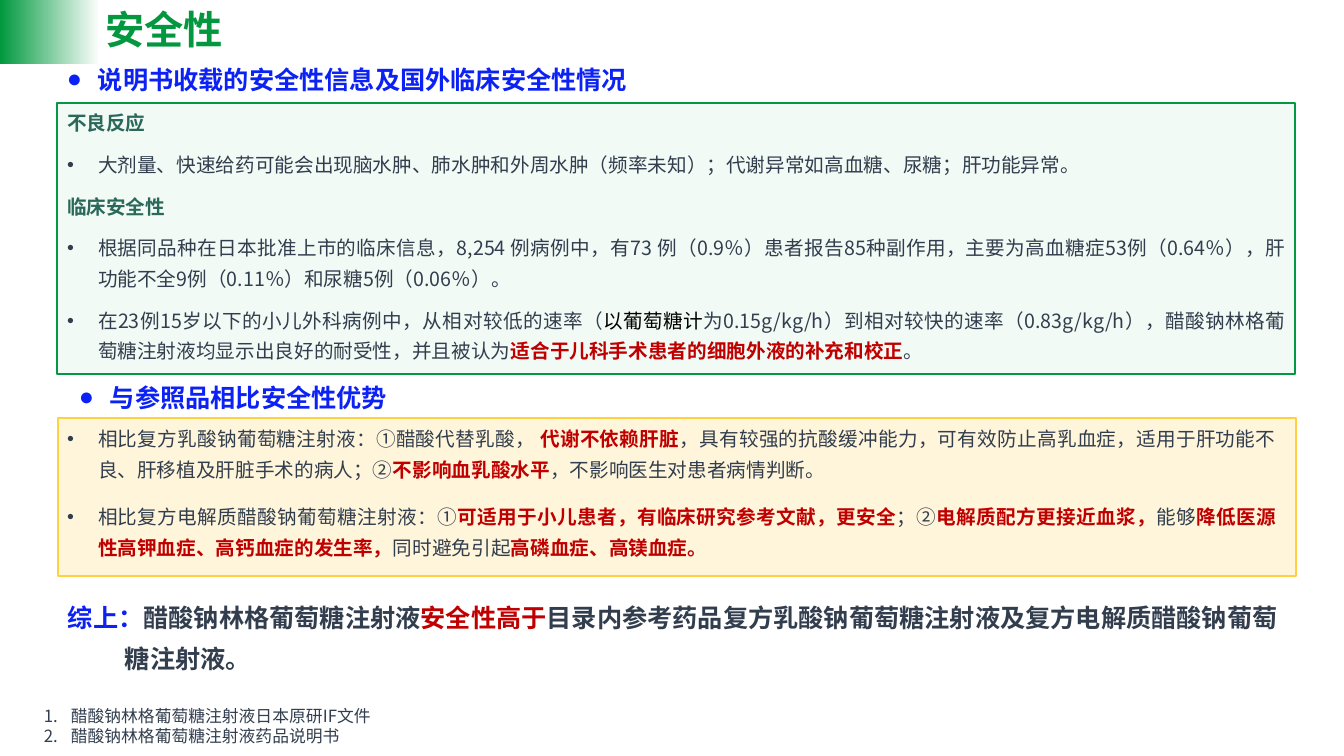
from lxml import etree
from pptx import Presentation
from pptx.dml.color import RGBColor
from pptx.enum.shapes import MSO_SHAPE as Preset
from pptx.enum.text import MSO_ANCHOR as Anchor, MSO_AUTO_SIZE as AutoSize, PP_ALIGN as Align
from pptx.oxml.ns import qn
from pptx.util import Emu, Pt

FONT = "Noto Sans CJK SC"
COLORS = {
    "white": "FFFFFF", "green": "00993E", "title": "039840", "frame": "039841",
    "mint": "F2FAF5", "cream": "FFF2CC", "gold": "FFD040", "teal": "2A685A",
    "slate": "323E4E", "red": "C00000", "blue": "0C22F4", "black": "000000",
}

# Run styles: colour name, bold
PLAIN, KEY, BLACK = ("slate", False), ("red", True), ("black", False)
SUBHEAD, HEADING, TITLE = ("teal", True), ("blue", True), ("title", True)
STRONG = ("slate", True)

# Each paragraph is a bullet (or "") and its runs
TITLE_TEXT = [("", [("安全性", TITLE)])]
LABEL_HEADING = [("●", [("说明书收载的安全性信息及国外临床安全性情况", HEADING)])]
ADVANTAGE_HEADING = [("●", [("与参照品相比安全性优势", HEADING)])]
SAFETY = [
    ("", [("不良反应", SUBHEAD)]),
    ("•", [("大剂量、快速给药可能会出现脑水肿、肺水肿和外周水肿（频率未知）；"
            "代谢异常如高血糖、尿糖；肝功能异常。", PLAIN)]),
    ("", [("临床安全性", SUBHEAD)]),
    ("•", [("根据同品种在日本批准上市的临床信息，8,254 例病例中，有73 例（0.9％）患者报告85种副作用，"
            "主要为高血糖症53例（0.64％），肝功能不全9例（0.11％）和尿糖5例（0.06％）。", PLAIN)]),
    ("•", [("在23例15岁以下的小儿外科病例中，从相对较低的速率（", PLAIN),
           ("以葡萄糖计", BLACK),
           ("为0.15g/kg/h）到相对较快的速率（0.83g/kg/h），"
            "醋酸钠林格葡萄糖注射液均显示出良好的耐受性，并且被认为", PLAIN),
           ("适合于儿科手术患者的细胞外液的补充和校正", KEY),
           ("。", PLAIN)]),
]
ADVANTAGES = [
    ("•", [("相比复方乳酸钠葡萄糖注射液：①醋酸代替乳酸， ", PLAIN),
           ("代谢不依赖肝脏", KEY),
           ("，具有较强的抗酸缓冲能力，可有效防止高乳血症，"
            "适用于肝功能不良、肝移植及肝脏手术的病人；②", PLAIN),
           ("不影响血乳酸水平", KEY),
           ("，不影响医生对患者病情判断。", PLAIN)]),
    ("•", [("相比复方电解质醋酸钠葡萄糖注射液：①", PLAIN),
           ("可适用于小儿患者，有临床研究参考文献，更安全", KEY),
           ("；②", PLAIN),
           ("电解质配方更接近血浆，", KEY),
           ("能够", PLAIN),
           ("降低医源性高钾血症、高钙血症的发生率，", KEY),
           ("同时避免引起", PLAIN),
           ("高磷血症、高镁血症。", KEY)]),
]
SUMMARY = [
    ("", [("综上：", HEADING),
          ("醋酸钠林格葡萄糖注射液", STRONG),
          ("安全性高于", KEY),
          ("目录内参考药品复方乳酸钠葡萄糖注射液及复方电解质醋酸钠葡萄", STRONG)]),
    ("", [("糖注射液。", STRONG)]),
]
REFERENCES = [
    ("", [("1.\t醋酸钠林格葡萄糖注射液日本原研IF文件", PLAIN)]),
    ("", [("2.\t醋酸钠林格葡萄糖注射液药品说明书", PLAIN)]),
]

SLIDE_WIDTH, SLIDE_HEIGHT = 1344, 756
SCALE = 12192000 / SLIDE_WIDTH
HANG = 31
SUMMARY_INDENT = 57


def px(length):
    return Emu(round(length * SCALE))


def rgb(name):
    return RGBColor.from_string(COLORS[name])


def add_panel(slide, box, fill, line=None, opacity=100):
    shape = slide.shapes.add_shape(Preset.RECTANGLE, *map(px, box))
    shape.shadow.inherit = False
    shape.fill.solid()
    shape.fill.fore_color.rgb = rgb(fill)
    if opacity < 100:
        color = shape.fill._xPr.find(qn("a:solidFill"))[0]
        etree.SubElement(color, qn("a:alpha")).set("val", str(opacity * 1000))
    if line:
        shape.line.color.rgb = rgb(line)
        shape.line.width = Pt(1)
    else:
        shape.line.fill.background()
    return shape


def set_indent(paragraph, left, hanging):
    properties = paragraph._p.get_or_add_pPr()
    properties.set("marL", str(px(left)))
    properties.set("indent", str(-px(hanging)))


def set_bullet(paragraph, bullet, color):
    properties = paragraph._p.get_or_add_pPr()
    if not bullet:
        etree.SubElement(properties, qn("a:buNone"))
        return
    bullet_color = etree.SubElement(properties, qn("a:buClr"))
    etree.SubElement(bullet_color, qn("a:srgbClr")).set("val", COLORS[color])
    etree.SubElement(properties, qn("a:buFont")).set("typeface", "Arial")
    etree.SubElement(properties, qn("a:buChar")).set("char", bullet)


def write(shape, box, paragraphs, size, align=Align.JUSTIFY, hang=HANG,
          line_spacing=1.0, space_before=0, anchor=Anchor.TOP):
    """Place a text shape in front of the others and fill it with formatted text."""
    shape.left, shape.top, shape.width, shape.height = map(px, box)
    shape._element.getparent().append(shape._element)
    frame = shape.text_frame
    frame.word_wrap = True
    frame.auto_size = AutoSize.NONE
    frame.vertical_anchor = anchor
    for index, (bullet, runs) in enumerate(paragraphs):
        paragraph = frame.add_paragraph() if index else frame.paragraphs[0]
        set_indent(paragraph, hang, hang)
        set_bullet(paragraph, bullet, runs[0][1][0])
        paragraph.alignment = align
        paragraph.line_spacing = line_spacing
        paragraph.space_before = Pt(space_before if index else 0)
        for text, (color, bold) in runs:
            run = paragraph.add_run()
            run.text = text
            run.font.size = Pt(size)
            run.font.bold = bold
            run.font.color.rgb = rgb(color)
            run.font.name = FONT
            latin = run._r.rPr.find(qn("a:latin"))
            east_asian = etree.Element(qn("a:ea"), typeface=FONT)
            latin.addnext(east_asian)
    return shape


def add_text(slide, box, paragraphs, size, **layout):
    return write(slide.shapes.add_textbox(*map(px, box)), box, paragraphs, size, **layout)


def main():
    presentation = Presentation()
    presentation.slide_width, presentation.slide_height = px(SLIDE_WIDTH), px(SLIDE_HEIGHT)
    slide = presentation.slides.add_slide(presentation.slide_layouts.get_by_name("Two Content"))
    title, safety, advantages = slide.placeholders

    corner = add_panel(slide, (0, 0, 100, 64), "green")
    corner.fill.gradient()
    corner.fill.gradient_angle = 0
    for stop, color, position in zip(corner.fill.gradient_stops, ("green", "white"), (0, 1)):
        stop.color.rgb = rgb(color)
        stop.position = position
    add_panel(slide, (57, 103, 1238, 271), "mint", "frame")
    add_panel(slide, (58, 418, 1238, 158), "cream", "gold", opacity=70)

    write(title, (95, 0, 297, 64), TITLE_TEXT, 28, align=Align.LEFT, hang=0,
          line_spacing=0.9, anchor=Anchor.MIDDLE)
    add_text(slide, (57, 59, 681, 40), LABEL_HEADING, 18)
    write(safety, (57, 99, 1238, 271), SAFETY, 14, line_spacing=1.3, space_before=8)
    add_text(slide, (69, 377, 413, 23), ADVANTAGE_HEADING, 18)
    write(advantages, (57, 419, 1229, 141), ADVANTAGES, 14, line_spacing=1.3,
          space_before=12, anchor=Anchor.MIDDLE)
    summary = add_text(slide, (58, 597, 1238, 83), SUMMARY, 18, space_before=8)
    set_indent(summary.text_frame.paragraphs[1], SUMMARY_INDENT, 0)
    add_text(slide, (34, 701, 1300, 50), REFERENCES, 12, align=Align.LEFT, hang=27)

    presentation.save("out.pptx")


if __name__ == "__main__":
    main()
